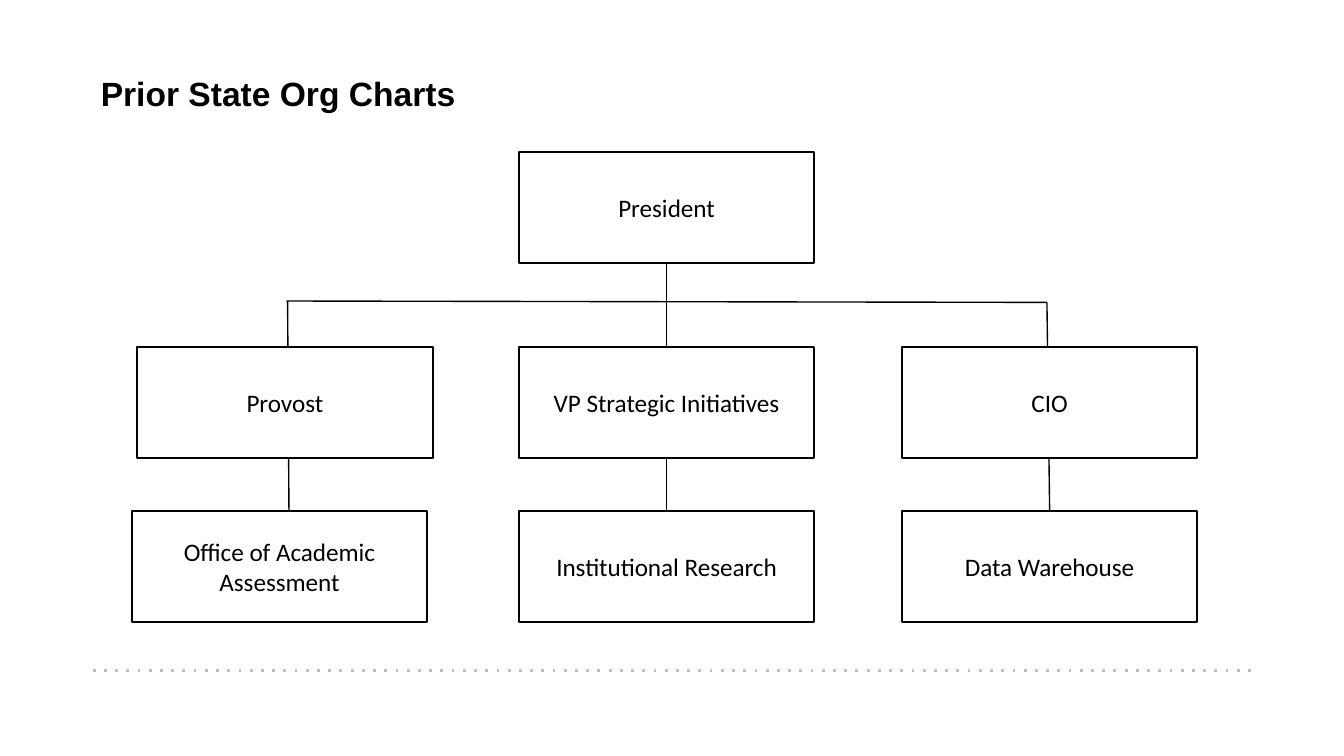
from pptx import Presentation
from pptx.dml.color import RGBColor
from pptx.enum.shapes import MSO_CONNECTOR, MSO_SHAPE
from pptx.enum.text import MSO_ANCHOR as ANCHOR, PP_ALIGN as ALIGN
from pptx.oxml.ns import qn
from pptx.util import Inches, Pt
from lxml.etree import SubElement

TITLE = "Prior State Org Charts"
BOXES = [
    ("President", 1, 0),
    ("VP Strategic Initiatives", 1, 1),
    ("CIO", 2, 1),
    ("Provost", 0, 1),
    ("Institutional Research", 1, 2),
    ("Data Warehouse", 2, 2),
    ("Office of Academic Assessment", 0, 2),
]
LEFTS = [1.02, 3.86, 6.71]
TOPS = [1.13, 2.58, 3.8]
NUDGE = {"Office of Academic Assessment": -0.04}
BOX_W, BOX_H = 2.2, 0.83

TRUNK = (4.96, 1.96, 4.96, 3.8)
PROVOST_LINE = (2.14, 2.24, 2.15, 3.8)
CIO_LINE = (7.79, 2.25, 7.81, 3.8)
CROSSBAR = (2.13, 2.24, 7.79, 2.25)
FOOTER_RULE = (0.69, 4.99, 9.32, 4.99)

THEME = {
    "ink": RGBColor(0, 0, 0),
    "paper": RGBColor(255, 255, 255),
    "rule": RGBColor(0xC0, 0xC0, 0xC0),
    "title": {"name": "Arial", "size": Pt(18), "bold": True},
    "label": {"name": "Calibri", "size": Pt(13.5)},
}


def set_attrs(obj, values):
    for name, value in values.items():
        setattr(obj, name, value)


def set_text(tf, text, font, align):
    margins = {f"margin_{side}": Inches(m) for side, m in
               (("left", 0.1), ("right", 0.1), ("top", 0.05), ("bottom", 0.05))}
    set_attrs(tf, {"text": text, "word_wrap": True, **margins})
    p = tf.paragraphs[0]
    p.alignment = align
    set_attrs(p.font, font)
    p.font.color.rgb = THEME["ink"]
    return p


def add_line(shapes, ends, color=THEME["ink"], width=0.75, dash=None):
    c = shapes.add_connector(MSO_CONNECTOR.STRAIGHT, *map(Inches, ends))
    c.line.color.rgb = color
    c.line.width = Pt(width)
    sp_pr = c._element.spPr
    if dash:
        SubElement(sp_pr.find(qn("a:ln")), qn("a:prstDash"), val=dash)
    SubElement(sp_pr, qn("a:effectLst"))
    return c


def add_box(shapes, text, col, row):
    place = (LEFTS[col] + NUDGE.get(text, 0), TOPS[row], BOX_W, BOX_H)
    sp = shapes.add_shape(MSO_SHAPE.RECTANGLE, *map(Inches, place))
    sp.shadow.inherit = False
    sp.fill.solid()
    sp.fill.fore_color.rgb = THEME["paper"]
    sp.line.color.rgb = THEME["ink"]
    sp.line.width = Pt(1)
    set_text(sp.text_frame, text, THEME["label"], ALIGN.CENTER)
    sp.text_frame.vertical_anchor = ANCHOR.MIDDLE
    return sp


def add_title(s):
    title = s.shapes.title
    set_attrs(title, {"left": Inches(0.65), "top": Inches(0.55),
                      "width": Inches(8.74), "height": Inches(0.67)})
    p = set_text(title.text_frame, TITLE, THEME["title"], ALIGN.LEFT)
    p.line_spacing = 0.8
    title.text_frame.vertical_anchor = ANCHOR.TOP


def main():
    prs = Presentation()
    prs.slide_width = Inches(10)
    prs.slide_height = Inches(10 * 9 / 16)
    s = prs.slides.add_slide(prs.slide_layouts[5])
    add_title(s)
    add_line(s.shapes, FOOTER_RULE, THEME["rule"], 1.5, "dot")

    chart = s.shapes.add_group_shape().shapes
    add_line(chart, PROVOST_LINE)
    cio_line = add_line(chart, CIO_LINE)
    trunk = add_line(chart, TRUNK)
    boxes = {text: add_box(chart, text, col, row) for text, col, row in BOXES}
    trunk.begin_connect(boxes["President"], 2)
    trunk.end_connect(boxes["Institutional Research"], 0)
    cio_line.end_connect(boxes["Data Warehouse"], 0)
    add_line(chart, CROSSBAR)
    prs.save("out.pptx")


if __name__ == "__main__":
    main()
